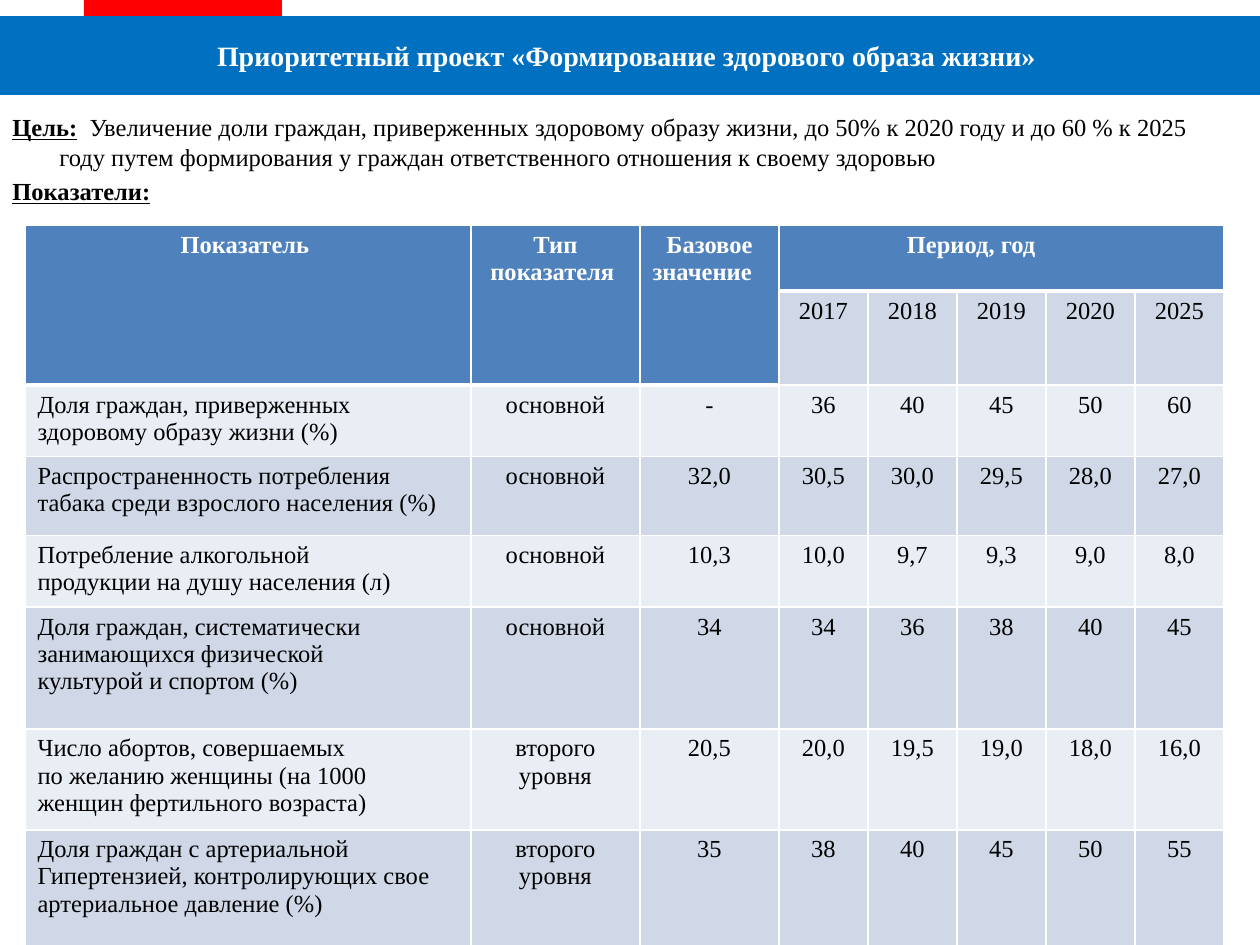
from lxml import etree
from pptx import Presentation
from pptx.dml.color import RGBColor
from pptx.enum.shapes import MSO_SHAPE
from pptx.enum.text import MSO_ANCHOR, PP_ALIGN
from pptx.oxml.ns import qn
from pptx.util import Emu, Pt

RECTANGLE = MSO_SHAPE.RECTANGLE
MIDDLE = MSO_ANCHOR.MIDDLE
LEFT, CENTER = PP_ALIGN.LEFT, PP_ALIGN.CENTER

FONT = "Times New Roman"
COLORS = {
    "banner": "0070C0",
    "accent": "FF0000",
    "header": "4F81BD",
    "dark_band": "D0D8E8",
    "light_band": "E9EDF4",
    "white": "FFFFFF",
    "black": "000000",
}

TITLE = "Приоритетный проект «Формирование здорового образа жизни» "
GOAL = [
    [("Цель:", True, True), ("  ", True, False),
     ("Увеличение доли граждан, приверженных здоровому образу жизни, до 50% к 2020 году "
      "и до 60 % к 2025 году путем формирования у граждан ответственного отношения "
      "к своему здоровью\t", False, False)],
    [("Показатели:", True, True)],
]
HEADINGS = ["Показатель ", "Тип показателя ", "Базовое значение \t", "Период, год \t"]
YEARS = ["2017", "2018", "2019", "2020", "2025"]
INDICATORS = [
    ("Доля граждан, приверженных\nздоровому образу жизни (%)",
     "основной", "-", "36", "40", "45", "50", "60"),
    ("Распространенность потребления табака среди взрослого населения (%)",
     "основной", "32,0", "30,5", "30,0", "29,5", "28,0", "27,0"),
    ("Потребление алкогольной\nпродукции на душу населения (л)",
     "основной", "10,3", "10,0", "9,7", "9,3", "9,0", "8,0"),
    ("Доля граждан, систематически\nзанимающихся физической\nкультурой и спортом (%)",
     "основной", "34", "34", "36", "38", "40", "45"),
    ("Число абортов, совершаемых\nпо желанию женщины (на 1000 женщин фертильного возраста)",
     "второго уровня", "20,5", "20,0", "19,5", "19,0", "18,0", "16,0"),
    ("Доля граждан с артериальной\nГипертензией, контролирующих свое\nартериальное давление (%)",
     "второго уровня", "35", "38", "40", "45", "50", "55"),
]
FIXED = len(HEADINGS) - 1
COLUMN_WIDTHS = [446, 169, 139] + [89] * len(YEARS)
ROW_HEIGHTS = [66, 94, 67, 79, 67, 122, 99, 121]


def px(length):
    return Emu(round(length * 914400 / 126))


def rgb(name):
    return RGBColor.from_string(COLORS[name])


def format_run(run, size, color, bold=False, underline=False):
    run.font.name = FONT
    run.font.size = Pt(size)
    run.font.bold = bold
    run.font.underline = underline
    run.font.color.rgb = rgb(color)


def add_bar(page, left, top, width, height, color):
    bar = page.shapes.add_shape(RECTANGLE, px(left), px(top), px(width), px(height))
    bar.shadow.inherit = False
    bar.fill.solid()
    bar.fill.fore_color.rgb = rgb(color)
    bar.line.fill.background()
    return bar


def add_goal(page):
    box = page.shapes.add_textbox(0, px(106), px(1245), px(110))
    frame = box.text_frame
    frame.word_wrap = True
    for index, spans in enumerate(GOAL):
        para = frame.paragraphs[0] if index == 0 else frame.add_paragraph()
        para.space_before = Pt(3)
        properties = para._p.get_or_add_pPr()
        properties.set("marL", str(px(47)))
        properties.set("indent", str(px(-47)))
        for text, bold, underline in spans:
            span = para.add_run()
            span.text = text
            format_run(span, 14, "black", bold, underline)


def set_borders(cell, bottom):
    properties = cell._tc.get_or_add_tcPr()
    widths = {"a:lnL": 1, "a:lnR": 1, "a:lnT": 1, "a:lnB": bottom}
    for index, (side, width) in enumerate(widths.items()):
        line = etree.Element(qn(side), w=str(Pt(width)))
        fill = etree.SubElement(line, qn("a:solidFill"))
        etree.SubElement(fill, qn("a:srgbClr"), val=COLORS["white"])
        properties.insert(index, line)


def style_cell(cell, text, fill, header, align):
    cell.text_frame.text = text
    cell.fill.solid()
    cell.fill.fore_color.rgb = rgb(fill)
    set_borders(cell, 3 if header else 1)
    for para in cell.text_frame.paragraphs:
        para.alignment = align
        for span in para.runs:
            format_run(span, 14, "white" if header else "black", header)


def add_indicators(page):
    rows = [HEADINGS + [""] * (len(YEARS) - 1), [""] * FIXED + YEARS, *INDICATORS]
    table = page.shapes.add_table(
        len(rows), len(COLUMN_WIDTHS), px(25), px(225),
        px(sum(COLUMN_WIDTHS)), px(sum(ROW_HEIGHTS))).table
    for column, width in zip(table.columns, COLUMN_WIDTHS):
        column.width = px(width)
    for row, height in zip(table.rows, ROW_HEIGHTS):
        row.height = px(height)
    for row, values in enumerate(rows):
        band = "dark_band" if row % 2 else "light_band"
        for column, text in enumerate(values):
            header = row == 0 or (row == 1 and column < FIXED)
            align = LEFT if row > 1 and column == 0 else CENTER
            style_cell(table.cell(row, column), text, "header" if header else band, header, align)
    for column in range(FIXED):
        table.cell(0, column).merge(table.cell(1, column))
    table.cell(0, FIXED).merge(table.cell(0, len(COLUMN_WIDTHS) - 1))


def main():
    deck = Presentation()
    deck.slide_width, deck.slide_height = px(1260), px(945)
    page = deck.slides.add_slide(deck.slide_layouts[6])
    banner = add_bar(page, 0, 16, 1260, 79, "banner")
    banner.text_frame.text = TITLE
    banner.text_frame.word_wrap = True
    banner.text_frame.vertical_anchor = MIDDLE
    para = banner.text_frame.paragraphs[0]
    para.alignment = CENTER
    format_run(para.runs[0], 16, "white", True)
    add_bar(page, 84, 0, 198, 16, "accent")
    add_goal(page)
    add_indicators(page)
    deck.save("out.pptx")


if __name__ == "__main__":
    main()
